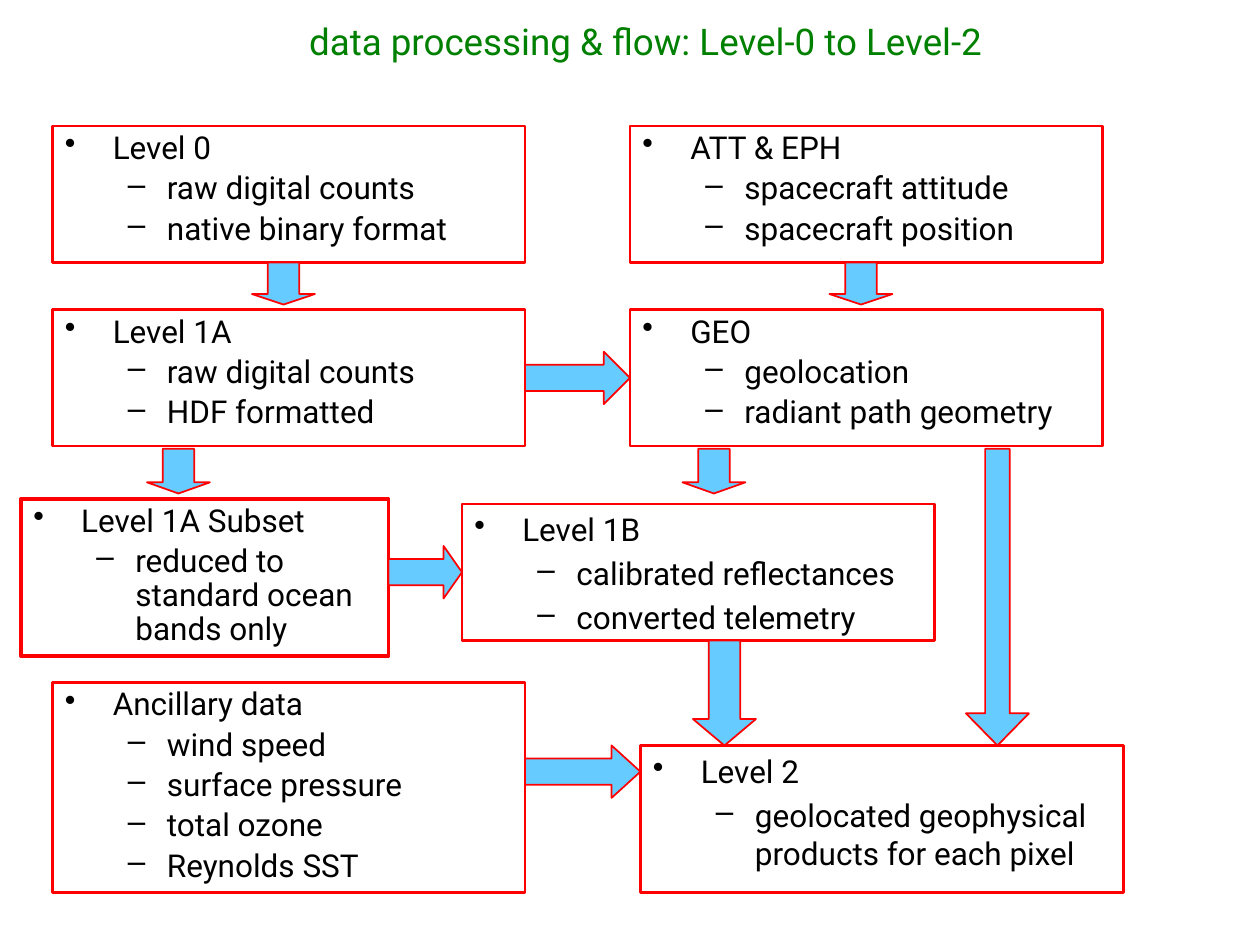
from lxml import etree
from pptx import Presentation
from pptx.dml.color import RGBColor
from pptx.enum.shapes import MSO_SHAPE
from pptx.enum.text import MSO_ANCHOR, PP_ALIGN
from pptx.oxml.ns import qn
from pptx.util import Inches, Pt

BOX, DOWN, RIGHT = MSO_SHAPE.RECTANGLE, MSO_SHAPE.DOWN_ARROW, MSO_SHAPE.RIGHT_ARROW
TOP, LEFT, CENTER = MSO_ANCHOR.TOP, PP_ALIGN.LEFT, PP_ALIGN.CENTER
RED = RGBColor(0xFF, 0x00, 0x00)
SKY = RGBColor(0x66, 0xCC, 0xFF)
GREEN = RGBColor(0x00, 0x80, 0x00)
BLACK = RGBColor(0x00, 0x00, 0x00)
COLUMNS, ROWS = 120, 90
WIDE, TALL = 45, 13
LEFT_COL, RIGHT_COL = 5, 60
TOP_ROW, SECOND_ROW = 12, 29.5
BELOW_SECOND = 42.75


class FlowSlide:
    font_name = "Roboto"
    levels = (("•", 0.38, -0.38), ("–", 0.81, -0.31))

    def __init__(self, deck):
        self.slide = deck.slides.add_slide(deck.slide_layouts[5])
        self.column = deck.slide_width / COLUMNS
        self.row = deck.slide_height / ROWS

    def place(self, left, top, width, height):
        return (round(left * self.column), round(top * self.row),
                round(width * self.column), round(height * self.row))

    def style(self, paragraph, size, color):
        for run in paragraph.runs:
            run.font.name = self.font_name
            run.font.size = Pt(size)
            run.font.color.rgb = color

    def title(self, wording, *area):
        heading = self.slide.shapes.title
        heading.left, heading.top, heading.width, heading.height = self.place(*area)
        frame = heading.text_frame
        frame.text = wording
        frame.word_wrap = True
        frame.vertical_anchor = TOP
        frame.paragraphs[0].alignment = CENTER
        self.style(frame.paragraphs[0], 21, GREEN)

    def outline(self, kind, area, line_width):
        shape = self.slide.shapes.add_shape(kind, *self.place(*area))
        shape.shadow.inherit = False
        shape.line.color.rgb = RED
        shape.line.width = Pt(line_width)
        return shape

    def stage(self, area, heading, details, spacing=0.9, line_width=1.5):
        stage = self.outline(BOX, area, line_width)
        stage.fill.background()
        frame = stage.text_frame
        frame.word_wrap = True
        frame.vertical_anchor = TOP
        frame.text = "\n".join([heading, *details])
        for index, paragraph in enumerate(frame.paragraphs):
            level = min(index, 1)
            mark, margin, indent = self.levels[level]
            paragraph.level = level
            paragraph.alignment = LEFT
            paragraph.line_spacing = spacing
            if index:
                paragraph.space_before = Pt(3.6)
            properties = paragraph._p.get_or_add_pPr()
            properties.set("marL", str(Inches(margin)))
            properties.set("indent", str(Inches(indent)))
            etree.SubElement(properties, qn("a:buChar")).set("char", mark)
            self.style(paragraph, 18, BLACK)

    def arrow(self, kind, area, shaft=0.5, head=0.25):
        arrow = self.outline(kind, area, 1)
        arrow.fill.solid()
        arrow.fill.fore_color.rgb = SKY
        arrow.adjustments[0] = shaft
        arrow.adjustments[1] = head


def main():
    deck = Presentation()
    deck.slide_width, deck.slide_height = Inches(10), Inches(7.5)
    flow = FlowSlide(deck)
    flow.title("data processing & flow: Level-0 to Level-2", 6, 1.2, 111, 5.4)

    flow.stage((LEFT_COL, TOP_ROW, WIDE, TALL), "Level 0",
               ["raw digital counts", "native binary format"])
    flow.stage((LEFT_COL, SECOND_ROW, WIDE, TALL), "Level 1A",
               ["raw digital counts", "HDF formatted"])
    flow.stage((44, 48, WIDE, TALL), "Level 1B",
               ["calibrated reflectances", "converted telemetry"], spacing=1.0)
    flow.stage((61, 71, 46, 14), "Level 2",
               ["geolocated geophysical products for each pixel"], spacing=1.0)
    flow.stage((LEFT_COL, 65, WIDE, 20), "Ancillary data",
               ["wind speed", "surface pressure", "total ozone", "Reynolds SST"])
    flow.stage((RIGHT_COL, SECOND_ROW, WIDE, TALL), "GEO",
               ["geolocation", "radiant path geometry"])
    flow.stage((RIGHT_COL, TOP_ROW, WIDE, TALL), "ATT & EPH",
               ["spacecraft attitude", "spacecraft position"])
    flow.stage((2, 47.5, 35, 15), "Level 1A Subset",
               ["reduced to standard ocean bands only"], line_width=2)

    for left in (24, 79):
        flow.arrow(DOWN, (left, TOP_ROW + TALL, 6, 4))
    for left in (14, 65):
        flow.arrow(DOWN, (left, BELOW_SECOND, 6, 4.25))
    flow.arrow(DOWN, (92, BELOW_SECOND, 6, 28.25), 0.39, 0.51)
    flow.arrow(DOWN, (66, 61, 6, 10), head=0.42)
    for left, top, width, head in ((50, 71, 11, 0.55), (50, 33.5, 10, 0.5), (37, 52, 7, 0.35)):
        flow.arrow(RIGHT, (left, top, width, 5), head=head)

    deck.save("out.pptx")


if __name__ == "__main__":
    main()
